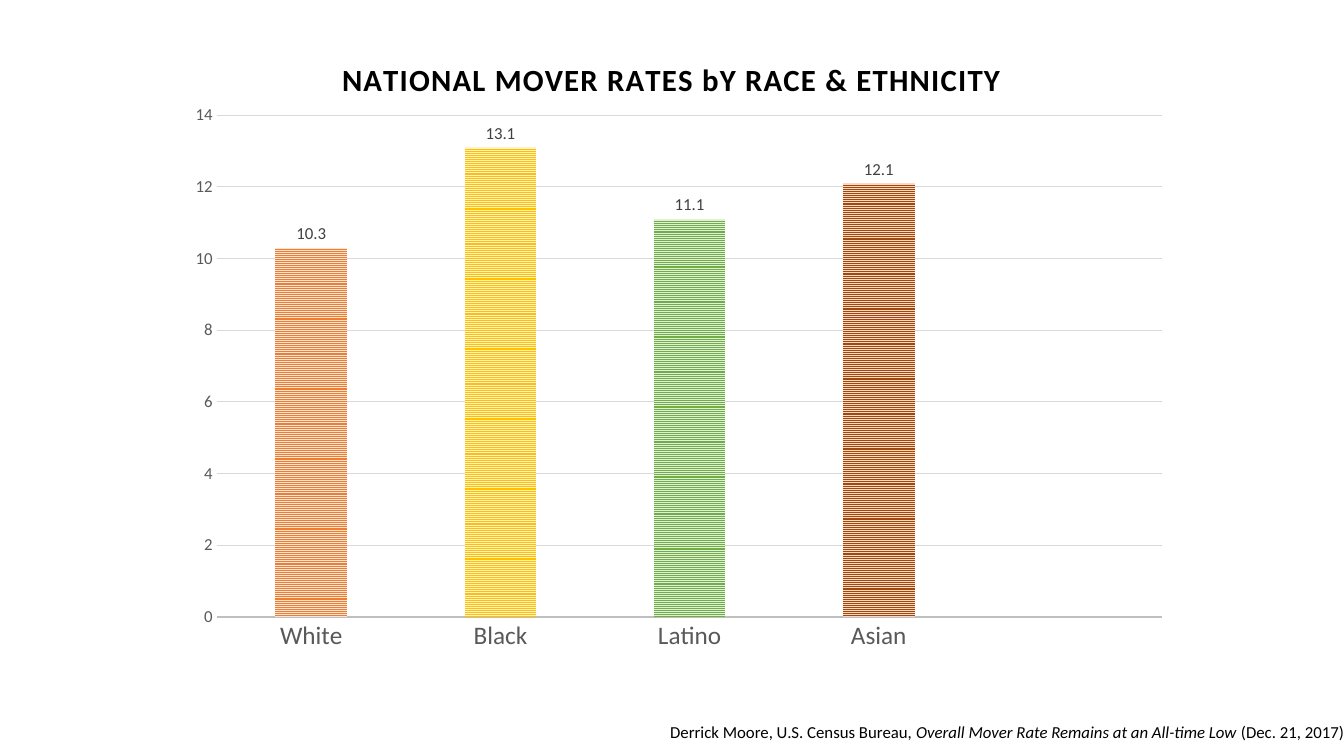
from dataclasses import dataclass

from lxml.etree import SubElement
from pptx import Presentation
from pptx.chart.data import CategoryChartData
from pptx.dml.color import RGBColor
from pptx.enum.chart import XL_CHART_TYPE, XL_LABEL_POSITION, XL_TICK_MARK
from pptx.enum.dml import MSO_PATTERN
from pptx.enum.text import MSO_AUTO_SIZE, PP_ALIGN
from pptx.oxml import parse_xml
from pptx.oxml.ns import nsdecls, qn
from pptx.util import Inches, Pt


@dataclass(frozen=True)
class Theme:
    font: str = "Calibri"
    black: str = "000000"
    axis_text: str = "595959"
    label_text: str = "404040"
    axis_line: str = "BFBFBF"
    grid: str = "D9D9D9"
    title_size: int = 22
    category_size: int = 18
    small_size: int = 12


THEME = Theme()
MOVER_RATES = [
    ("White", 10.3, "ED7D31", "FBE5D6"),
    ("Black", 13.1, "FFC000", "FFF2CC"),
    ("Latino", 11.1, "70AD47", "E2F0D9"),
    ("Asian", 12.1, "9E480E", "FAD8C1"),
    ("", None, "997300", "FFEDB8"),
]


def style_font(font, size, color):
    font.name = THEME.font
    font.size = Pt(size)
    font.color.rgb = RGBColor.from_string(color)


def style_line(line, color, width):
    line.color.rgb = RGBColor.from_string(color)
    line.width = Pt(width)


def place(element, index, **fractions):
    for layout in element.findall(qn("c:layout")):
        element.remove(layout)
    layout = parse_xml(f"<c:layout {nsdecls('c')}/>")
    manual = SubElement(layout, qn("c:manualLayout"))
    if "w" in fractions:
        SubElement(manual, qn("c:layoutTarget")).set("val", "inner")
    for axis in ("x", "y"):
        SubElement(manual, qn(f"c:{axis}Mode")).set("val", "edge")
    for name, value in fractions.items():
        SubElement(manual, qn(f"c:{name}")).set("val", str(value))
    element.insert(index, layout)


def add_title(chart, text):
    chart.has_title = True
    title = chart.chart_title
    paragraph = title.text_frame.paragraphs[0]
    run = paragraph.add_run()
    run.text = text
    style_font(run.font, THEME.title_size, THEME.black)
    run.font.bold = True
    run.font._element.set("spc", "100")
    place(title._element, 1, x=0.16, y=0.04)


def style_axes(chart):
    category_axis, value_axis = chart.category_axis, chart.value_axis
    for axis, size in (
        (category_axis, THEME.category_size),
        (value_axis, THEME.small_size),
    ):
        axis.major_tick_mark = XL_TICK_MARK.NONE
        axis.minor_tick_mark = XL_TICK_MARK.NONE
        style_font(axis.tick_labels.font, size, THEME.axis_text)
    style_line(category_axis.format.line, THEME.axis_line, 1.5)
    value_axis.format.line.fill.background()
    value_axis.minimum_scale = 0
    value_axis.maximum_scale = 14
    value_axis.major_unit = 2
    style_line(value_axis.major_gridlines.format.line, THEME.grid, 0.75)


def style_columns(plot):
    plot.gap_width = 164
    plot.overlap = -22
    plot.vary_by_categories = False
    series = plot.series[0]
    for index, (_, _, foreground, background) in enumerate(MOVER_RATES):
        fill = series.points[index].format.fill
        fill.patterned()
        fill.pattern = MSO_PATTERN.NARROW_HORIZONTAL
        fill.fore_color.rgb = RGBColor.from_string(foreground)
        fill.back_color.rgb = RGBColor.from_string(background)
    labels = series.data_labels
    labels.show_value = True
    labels.position = XL_LABEL_POSITION.OUTSIDE_END
    style_font(labels.font, THEME.small_size, THEME.label_text)


def add_rate_chart(slide):
    data = CategoryChartData()
    data.categories = [name for name, *_ in MOVER_RATES]
    data.add_series("Series 1", [rate for _, rate, *_ in MOVER_RATES])
    chart = slide.shapes.add_chart(
        XL_CHART_TYPE.COLUMN_CLUSTERED,
        Inches(1.74), Inches(0.27), Inches(9.98), Inches(6.33), data,
    ).chart
    chart.has_legend = False
    style_font(chart.font, 10, THEME.black)
    add_title(chart, "NATIONAL MOVER RATES bY RACE & ETHNICITY")
    style_axes(chart)
    style_columns(chart.plots[0])
    plot_area = chart._chartSpace.find(f".//{qn('c:plotArea')}")
    place(plot_area, 0, x=0.041, y=0.138, w=0.94, h=0.786)


def add_citation(slide, parts):
    shape = slide.shapes.add_textbox(
        Inches(6.24), Inches(7.11), Inches(7.09), Inches(0.3)
    )
    frame = shape.text_frame
    frame.word_wrap = True
    frame.auto_size = MSO_AUTO_SIZE.SHAPE_TO_FIT_TEXT
    frame.margin_right = Inches(0)
    paragraph = frame.paragraphs[0]
    paragraph.alignment = PP_ALIGN.RIGHT
    style_font(paragraph.font, THEME.small_size, THEME.black)
    for text, italic in parts:
        run = paragraph.add_run()
        run.text = text
        run.font.italic = italic


def main():
    presentation = Presentation()
    presentation.slide_width = Inches(13.33)
    presentation.slide_height = Inches(7.5)
    slide = presentation.slides.add_slide(presentation.slide_layouts[6])
    add_rate_chart(slide)
    add_citation(slide, [
        ("Derrick Moore, U.S. Census Bureau, ", False),
        ("Overall Mover Rate Remains at an All-time Low ", True),
        ("(Dec. 21, 2017)", False),
    ])
    presentation.save("out.pptx")


if __name__ == "__main__":
    main()
